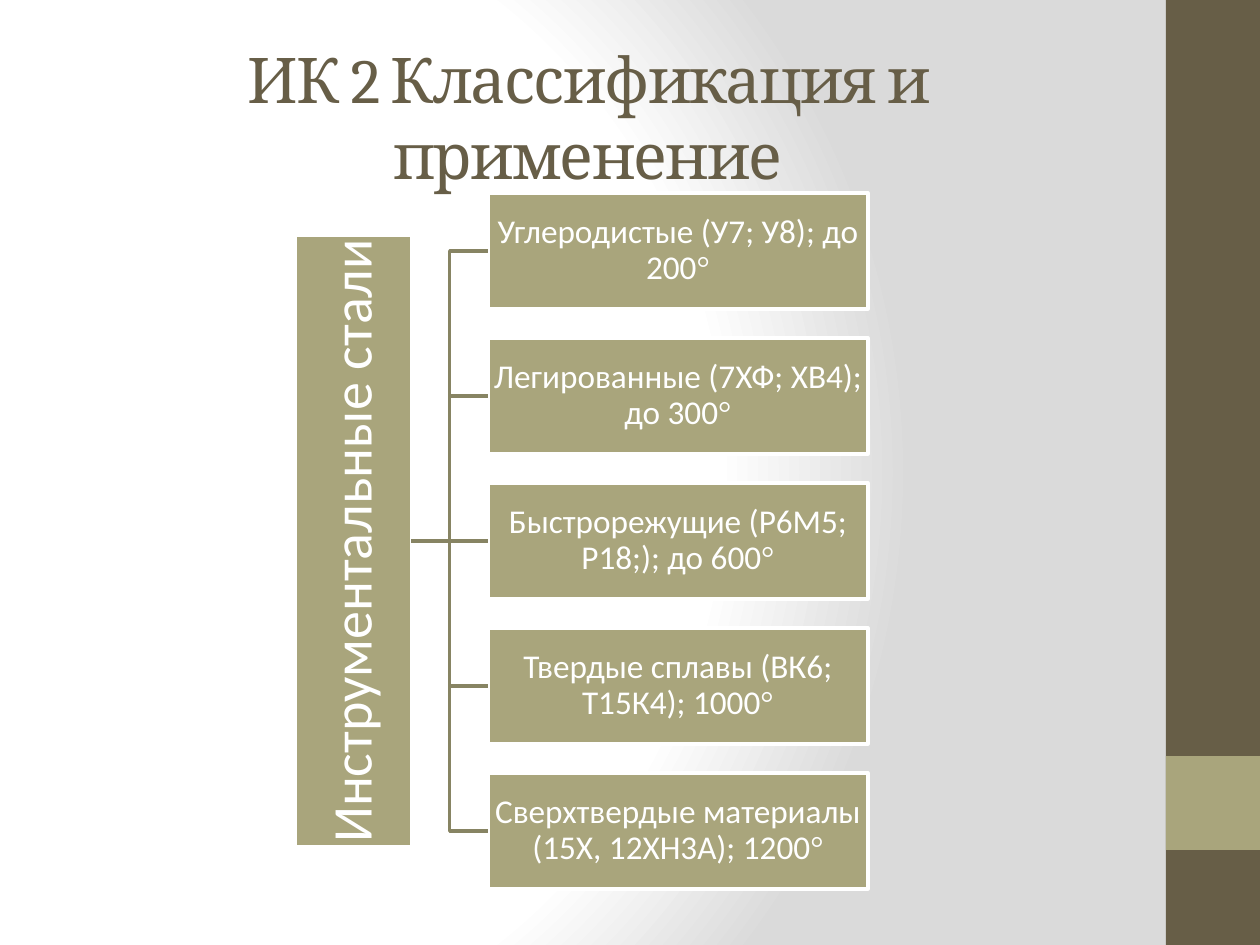
"""Build a slide that classifies tool steels and alloys by heat resistance."""
from dataclasses import dataclass

import pptx
import pptx.dml.color
import pptx.enum.shapes
import pptx.enum.text
import pptx.oxml
import pptx.oxml.ns
import pptx.util
from pptx.oxml.xmlchemy import OxmlElement

PIXELS_PER_INCH = 126


@dataclass(frozen=True)
class Theme:
    dark: str = "675E47"
    accent: str = "A9A57C"
    connector: str = "878463"
    light: str = "FFFFFF"
    shade: str = "DADADA"
    heading_font: str = "Cambria"
    body_font: str = "Calibri"
    symbol_font: str = "Times New Roman"
    title_size: int = 36
    root_size: int = 32
    branch_size: int = 19
    line_width: int = 2


@dataclass(frozen=True)
class Box:
    left: int
    top: int
    width: int
    height: int


THEME = Theme()
BARS = [
    (Box(1166, 0, 94, 945), THEME.dark),
    (Box(1166, 756, 94, 94), THEME.accent),
]
TITLE_BOX = Box(63, 38, 1050, 157)
ROOT_BOX = Box(48, 483, 611, 116)
FIRST_BRANCH = Box(488, 193, 380, 116)
BRANCH_PITCH = 145
BRANCHES = [
    "Углеродистые (У7; У8); до 200",
    "Легированные (7ХФ; ХВ4); до 300",
    "Быстрорежущие (Р6М5; Р18;); до 600",
    "Твердые сплавы (ВК6; Т15К4); 1000",
    "Сверхтвердые материалы (15Х, 12ХН3А); 1200",
]


def px(length: int) -> pptx.util.Emu:
    return pptx.util.Emu(round(length * 914400 / PIXELS_PER_INCH))


def place(box: Box) -> tuple:
    return px(box.left), px(box.top), px(box.width), px(box.height)


def rgb(color: str) -> pptx.dml.color.RGBColor:
    return pptx.dml.color.RGBColor.from_string(color)


def set_background(slide) -> None:
    fill = slide.background.fill
    fill.gradient()
    gradient = slide.background._cSld.bg.bgPr.find(pptx.oxml.ns.qn("a:gradFill"))
    stops = "".join(
        f'<a:gs pos="{position}000"><a:srgbClr val="{color}"/></a:gs>'
        for position, color in [(0, THEME.light), (75, THEME.light), (100, THEME.shade)]
    )
    radial = pptx.oxml.parse_xml(
        f'<a:gradFill {pptx.oxml.ns.nsdecls("a")} rotWithShape="1"><a:gsLst>{stops}</a:gsLst>'
        '<a:path path="circle"><a:fillToRect l="20000" t="50000" r="100000" b="50000"/></a:path>'
        "</a:gradFill>"
    )
    gradient.getparent().replace(gradient, radial)


def add_rectangle(slide, box: Box, color: str, outline: str | None = None):
    shape = slide.shapes.add_shape(pptx.enum.shapes.MSO_SHAPE.RECTANGLE, *place(box))
    shape.shadow.inherit = False
    shape.fill.solid()
    shape.fill.fore_color.rgb = rgb(color)
    if outline:
        shape.line.color.rgb = rgb(outline)
        shape.line.width = pptx.util.Pt(THEME.line_width)
    else:
        shape.line.fill.background()
    return shape


def style_paragraph(paragraph, font: str, size: int, color: str) -> None:
    paragraph.alignment = pptx.enum.text.PP_ALIGN.CENTER
    paragraph.font.name = font
    paragraph.font.size = pptx.util.Pt(size)
    paragraph.font.color.rgb = rgb(color)


def add_title(slide, text: str) -> None:
    title = slide.shapes.title
    title.left, title.top, title.width, title.height = place(TITLE_BOX)
    frame = title.text_frame
    frame.text = text
    frame.auto_size = pptx.enum.text.MSO_AUTO_SIZE.NONE
    frame.vertical_anchor = pptx.enum.text.MSO_ANCHOR.MIDDLE
    paragraph = frame.paragraphs[0]
    style_paragraph(paragraph, THEME.heading_font, THEME.title_size, THEME.dark)
    paragraph.runs[0]._r.get_or_add_rPr().set("spc", "-100")


def add_node(slide, box: Box, text: str, size: int, margin: int, symbol: str = ""):
    shape = add_rectangle(slide, box, THEME.accent, THEME.light)
    frame = shape.text_frame
    frame.word_wrap = True
    frame.vertical_anchor = pptx.enum.text.MSO_ANCHOR.MIDDLE
    frame.margin_left = frame.margin_right = px(margin)
    frame.margin_top = frame.margin_bottom = px(margin)
    paragraph = frame.paragraphs[0]
    paragraph.line_spacing = 0.9
    style_paragraph(paragraph, THEME.body_font, size, THEME.light)
    paragraph.add_run().text = text
    if symbol:
        run = paragraph.add_run()
        run.text = symbol
        run.font.name = THEME.symbol_font
    return shape


def add_branch_line(slide, root, branch) -> None:
    start_x = root.left + (root.width + root.height) // 2
    start_y = root.top + root.height // 2
    end_y = branch.top + branch.height // 2
    kinds = pptx.enum.shapes.MSO_CONNECTOR
    kind = kinds.STRAIGHT if start_y == end_y else kinds.ELBOW
    connector = slide.shapes.add_connector(kind, start_x, start_y, branch.left, end_y)
    connector.end_connect(branch, 1)
    connector.line.color.rgb = rgb(THEME.connector)
    connector.line.width = pptx.util.Pt(THEME.line_width)
    connector._element.spPr.append(OxmlElement("a:effectLst"))


def main() -> None:
    presentation = pptx.Presentation()
    presentation.slide_width, presentation.slide_height = px(1260), px(945)
    slide = presentation.slides.add_slide(presentation.slide_layouts[5])
    set_background(slide)
    for box, color in BARS:
        add_rectangle(slide, box, color)
    add_title(slide, "ИК 2 Классификация и применение")
    root = add_node(slide, ROOT_BOX, "Инструментальные стали", THEME.root_size, 3)
    root.rotation = 270
    for index, text in enumerate(BRANCHES):
        top = FIRST_BRANCH.top + index * BRANCH_PITCH
        box = Box(FIRST_BRANCH.left, top, FIRST_BRANCH.width, FIRST_BRANCH.height)
        branch = add_node(slide, box, text, THEME.branch_size, 1, symbol="°")
        add_branch_line(slide, root, branch)
    presentation.save("out.pptx")


if __name__ == "__main__":
    main()
